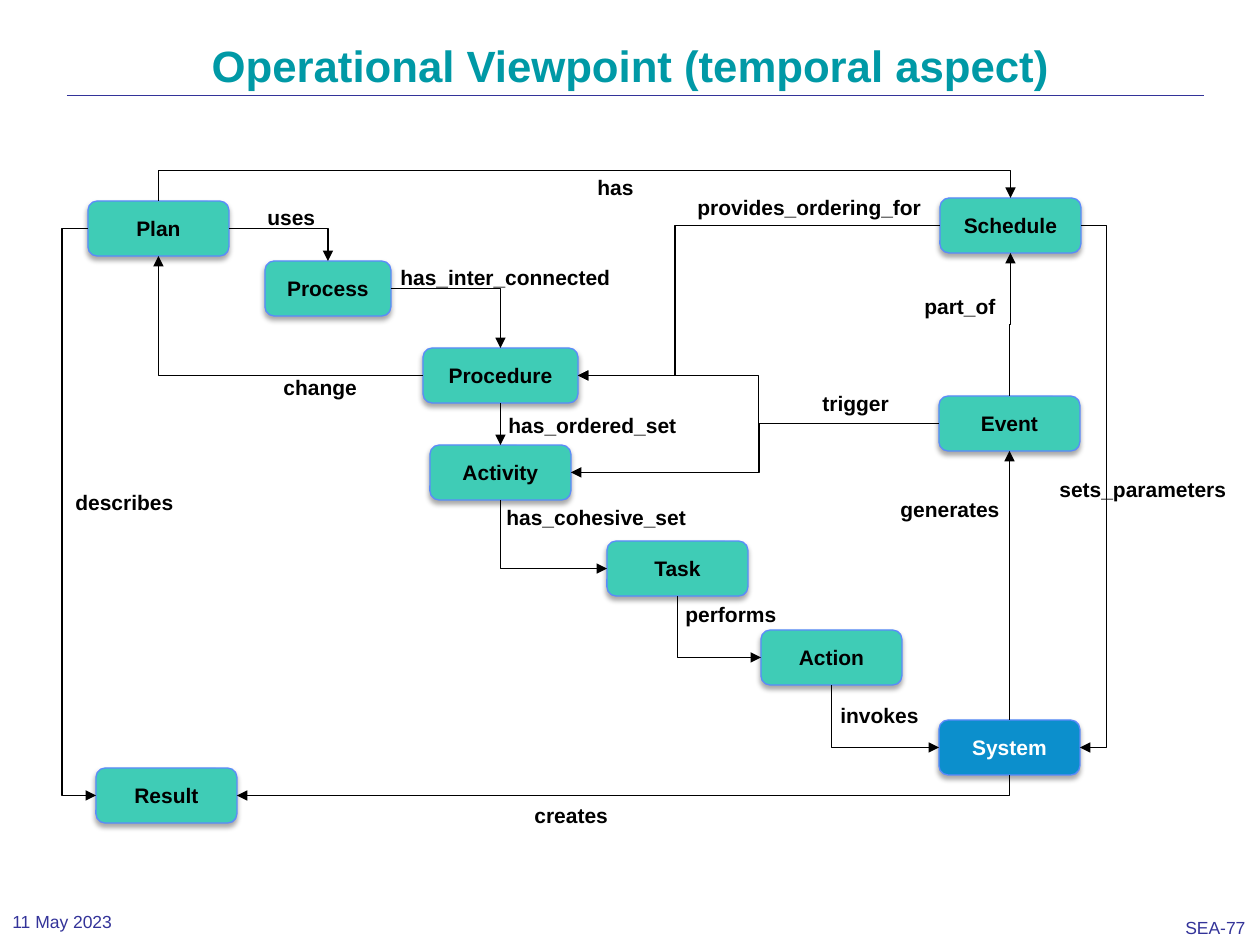
import pptx
import pptx.dml.color
import pptx.enum.shapes
import pptx.enum.text
import pptx.oxml
import pptx.oxml.ns
import pptx.util

PX = 914400 / 126  # EMU in one px
NODE_WIDTH, NODE_HEIGHT, LABEL_HEIGHT = 141, 55, 38
SITES = {"top": 0, "left": 1, "bottom": 2, "right": 3}
TEAL, BLUE, BLACK, WHITE, NAVY = "3FCCB6", "0C8FCC", "000000", "FFFFFF", "333399"
NODE_FONT = {"size": pptx.util.Pt(12), "name": "Arial", "bold": True}
FOOTER_FONT = {"size": pptx.util.Pt(10), "name": "Arial"}
TITLE_FONT = {"size": pptx.util.Pt(25), "name": "Arial", "bold": True}

# name: left, top, width, fill, text colour
NODES = {
    "Plan": (28, 41, NODE_WIDTH, TEAL, BLACK),
    "Schedule": (880, 38, NODE_WIDTH, TEAL, BLACK),
    "Process": (205, 101, 126, TEAL, BLACK),
    "Procedure": (363, 188, 155, TEAL, BLACK),
    "Activity": (370, 285, NODE_WIDTH, TEAL, BLACK),
    "Task": (547, 381, NODE_WIDTH, TEAL, BLACK),
    "Action": (701, 470, NODE_WIDTH, TEAL, BLACK),
    "Event": (879, 236, NODE_WIDTH, TEAL, BLACK),
    "System": (879, 560, NODE_WIDTH, BLUE, WHITE),
    "Result": (36, 608, NODE_WIDTH, TEAL, BLACK),
}

# start node, side, end node, side, position of the middle leg, label, its left, top, width
RELATIONS = [
    ("Plan", "top", "Schedule", "top", 10, "has", 525, 8, 141),
    ("Plan", "right", "Process", "top", None, "uses", 195, 38, 134),
    ("Plan", "left", "Result", "left", 2, "describes", 3, 323, 134),
    ("Process", "right", "Procedure", "top", None, "has_inter_connected", 328, 98, 253),
    ("Procedure", "left", "Plan", "bottom", None, "change", 211, 208, 134),
    ("Procedure", "bottom", "Activity", "top", None, "has_ordered_set", 436, 246, 207),
    ("Activity", "bottom", "Task", "left", None, "has_cohesive_set", 434, 338, 220),
    ("Task", "bottom", "Action", "left", None, "performs", 613, 435, 171),
    ("Action", "bottom", "System", "left", None, "invokes", 768, 536, 134),
    ("System", "top", "Event", "bottom", None, "generates", 828, 330, 134),
    ("System", "bottom", "Result", "right", None, "creates", 462, 636, 134),
    ("Event", "top", "Schedule", "bottom", None, "part_of", 852, 127, 118),
    ("Schedule", "left", "Procedure", "right", 615, "provides_ordering_for", 625, 28, 276),
    ("Schedule", "right", "System", "right", 1047, "sets_parameters", 987, 310, 209),
    ("Event", "left", "Procedure", "right", 699, "trigger", 750, 224, 118),
    ("Event", "left", "Activity", "right", 699, None, 0, 0, 0),
]


def emu(px):
    return pptx.util.Emu(round(px * PX))


def color(hex_string):
    return pptx.dml.color.RGBColor.from_string(hex_string)


def xml(text):
    namespace = pptx.oxml.ns.nsdecls("a")
    return pptx.oxml.parse_xml(text.replace(">", f" {namespace}>", 1))


def write(shape, text, font_values, hex_string, align="LEFT", anchor="TOP"):
    frame = shape.text_frame
    frame.word_wrap = True
    frame.vertical_anchor = getattr(pptx.enum.text.MSO_ANCHOR, anchor)
    paragraph = frame.paragraphs[0]
    paragraph.text = text
    paragraph.alignment = getattr(pptx.enum.text.PP_ALIGN, align)
    for name, value in font_values.items():
        setattr(paragraph.font, name, value)
    paragraph.font.color.rgb = color(hex_string)
    return paragraph


def add_text(slide, box, text, font_values, hex_string, anchor="TOP"):
    text_box = slide.shapes.add_textbox(*map(emu, box))
    write(text_box, text, font_values, hex_string, anchor=anchor)
    return text_box


def add_line(slide, kind, hex_string, width):
    connector = slide.shapes.add_connector(kind, 0, 0, 0, 0)
    connector.line.color.rgb = color(hex_string)
    connector.line.width = pptx.util.Pt(width)
    connector._element.spPr.append(xml("<a:effectLst></a:effectLst>"))
    return connector


def add_node(slide, box, name, fill, text_color):
    node = slide.shapes.add_shape(
        pptx.enum.shapes.MSO_SHAPE.ROUNDED_RECTANGLE, *map(emu, box))
    node.fill.solid()
    node.fill.fore_color.rgb = color(fill)
    node.line.color.rgb = color("5B8AFB")
    node.line.width = pptx.util.Pt(0.75)
    node.shadow.inherit = False
    effects = node._element.spPr.find(pptx.oxml.ns.qn("a:effectLst"))
    effects.append(xml(
        f'<a:outerShdw blurRad="{pptx.util.Pt(3.1)}" dist="{pptx.util.Pt(1.8)}" '
        'dir="5400000" rotWithShape="0"><a:srgbClr val="000000">'
        '<a:alpha val="35000"/></a:srgbClr></a:outerShdw>'))
    write(node, name, NODE_FONT, text_color, "CENTER", "MIDDLE")
    return node


def site_point(node, side):
    x = {"left": 0, "right": node.width}.get(side, node.width // 2)
    y = {"top": 0, "bottom": node.height}.get(side, node.height // 2)
    return node.left + x, node.top + y


def add_arrow(slide, start, start_side, end, end_side, turn):
    """Join two nodes; turn is where the middle leg lies, halfway if None."""
    kinds = pptx.enum.shapes.MSO_CONNECTOR
    x1, y1 = site_point(start, start_side)
    x2, y2 = site_point(end, end_side)
    dx, dy = x2 - x1, y2 - y1
    vertical = start_side in ("top", "bottom")
    same_axis = vertical == (end_side in ("top", "bottom"))
    straight = vertical and same_axis and abs(dx) < 10
    arrow = add_line(slide, kinds.STRAIGHT if straight else kinds.ELBOW, BLACK, 0.75)
    arrow.begin_connect(start, SITES[start_side])
    arrow.end_connect(end, SITES[end_side])
    arrow.line._get_or_add_ln().append(xml('<a:tailEnd type="triangle"></a:tailEnd>'))
    if straight:
        return

    # A vertical first leg is a horizontal one turned by a quarter
    width, height = (abs(dy), abs(dx)) if vertical else (abs(dx), abs(dy))
    arrow.left, arrow.top = (x1 + x2 - width) // 2, (y1 + y2 - height) // 2
    arrow.width, arrow.height = width, height
    transform = {
        "rot": 5400000 if vertical else 0,
        "flipH": int(dy < 0 if vertical else dx < 0),
        "flipV": int(dx > 0 if vertical else dy < 0),
    }
    properties = arrow._element.spPr
    for name, value in transform.items():
        properties.xfrm.set(name, str(value))

    geometry = properties.find(pptx.oxml.ns.qn("a:prstGeom"))
    if not same_axis:
        geometry.set("prst", "bentConnector2")
    elif turn is not None:
        first, span = (y1, dy) if vertical else (x1, dx)
        ratio = round((turn - first) / span * 100000)
        guides = geometry.find(pptx.oxml.ns.qn("a:avLst"))
        guides.append(xml(f'<a:gd name="adj1" fmla="val {ratio}"></a:gd>'))


def add_heading(slide, box, text):
    left, top, width, height = box
    title = slide.shapes.title
    title.left, title.top, title.width, title.height = map(emu, box)
    paragraph = write(title, text, TITLE_FONT, "0099A6", "CENTER")
    paragraph.line_spacing = 0.9
    title.text_frame.auto_size = pptx.enum.text.MSO_AUTO_SIZE.NONE
    rule = add_line(slide, pptx.enum.shapes.MSO_CONNECTOR.STRAIGHT, NAVY, 0.13)
    rule.begin_x, rule.end_x = emu(left + 4), emu(left + width + 7)
    rule.begin_y = rule.end_y = emu(top + 57)


def add_diagram(slide, box):
    left, top = box[:2]
    nodes = {}
    for name, (x, y, width, fill, text_color) in NODES.items():
        node_box = (left + x, top + y, width, NODE_HEIGHT)
        nodes[name] = add_node(slide, node_box, name, fill, text_color)
    for start, start_side, end, end_side, turn, label, x, y, width in RELATIONS:
        if turn is not None:
            turn = emu(turn + (top if start_side in ("top", "bottom") else left))
        add_arrow(slide, nodes[start], start_side, nodes[end], end_side, turn)
        if label:
            label_box = (left + x, top + y, width, LABEL_HEIGHT)
            add_text(slide, label_box, label, NODE_FONT, BLACK)


def add_footer(slide, box):
    left, top, width, height = box
    add_text(slide, (left, top, 238, 37), "11 May 2023", FOOTER_FONT, NAVY, "MIDDLE")
    number = add_text(slide, (left + width - 87, top + 9, 87, 33), "SEA-77", FOOTER_FONT, NAVY)
    number.text_frame.margin_top = number.text_frame.margin_bottom = emu(5)


def main():
    presentation = pptx.Presentation()
    presentation.slide_width, presentation.slide_height = emu(1260), emu(945)
    slide = presentation.slides.add_slide(presentation.slide_layouts[5])
    add_heading(slide, (63, 38, 1134, 157), "Operational Viewpoint (temporal aspect)")
    add_diagram(slide, (60, 160, 1180, 670))
    add_footer(slide, (0, 903, 1260, 42))
    presentation.save("out.pptx")


if __name__ == "__main__":
    main()
